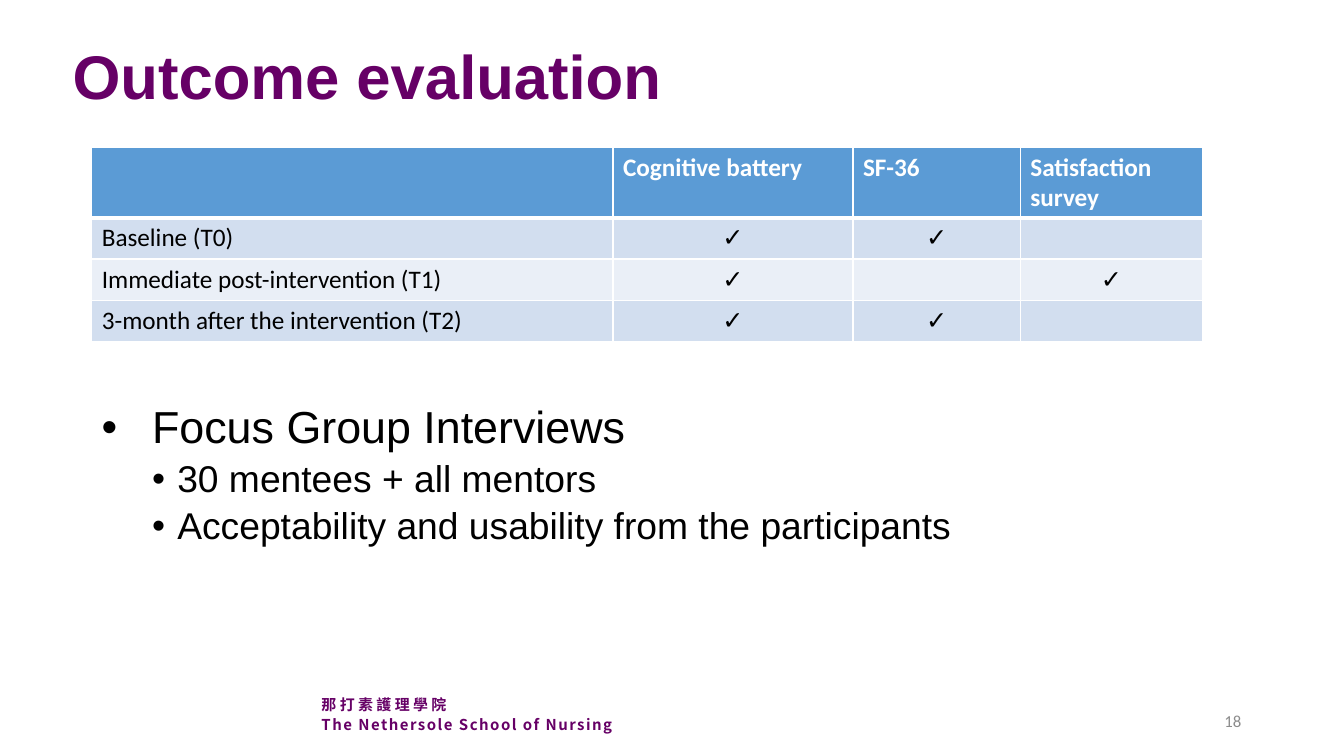
"""Build the outcome evaluation slide with its schedule table and interview notes."""
from dataclasses import dataclass

from lxml import etree
from pptx import Presentation
from pptx.dml.color import RGBColor
from pptx.enum.text import MSO_ANCHOR, MSO_AUTO_SIZE, PP_ALIGN
from pptx.oxml.ns import qn
from pptx.util import Inches, Pt

LEFT, CENTER, RIGHT = PP_ALIGN.LEFT, PP_ALIGN.CENTER, PP_ALIGN.RIGHT
TOP, MIDDLE = MSO_ANCHOR.TOP, MSO_ANCHOR.MIDDLE
NO_AUTOFIT = MSO_AUTO_SIZE.NONE
TITLE_ONLY = 5


@dataclass(frozen=True)
class Theme:
    """Colours, fonts and type sizes of the slide."""
    purple: str = "660066"
    black: str = "000000"
    white: str = "FFFFFF"
    grey: str = "8C8C8C"
    header: str = "5B9BD5"
    bands: tuple = ("D2DEEF", "EAEFF7")
    heading_font: str = "Arial"
    table_font: str = "Calibri"
    school_font: str = "Noto Sans CJK SC"
    title_size: float = 44
    bullet_size: float = 32
    detail_size: float = 26.6
    table_size: float = 18
    number_size: float = 12
    school_size: float = 10.67


class SlideBuilder:
    """Holds the theme and the current slide."""

    def __init__(self, presentation, theme):
        """Add a title-only slide to the presentation."""
        self.theme = theme
        self.slide = presentation.slides.add_slide(presentation.slide_layouts[TITLE_ONLY])

    def run(self, paragraph, text, font, size, color, bold=False, tracking=0):
        """Append one formatted run to a paragraph."""
        run = paragraph.add_run()
        run.text = text
        run.font.name = font
        run.font.size = Pt(size)
        run.font.bold = bold
        run.font.color.rgb = RGBColor.from_string(color)
        properties = run.font._element
        etree.SubElement(properties, qn("a:ea"), typeface=font)
        if tracking:
            properties.set("spc", str(round(tracking * 100)))

    def title(self, text, left, top, width, height):
        """Place and format the title placeholder."""
        shape = self.slide.shapes.title
        shape.left, shape.top = Inches(left), Inches(top)
        shape.width, shape.height = Inches(width), Inches(height)
        frame = shape.text_frame
        frame.auto_size = NO_AUTOFIT
        frame.vertical_anchor = MIDDLE
        paragraph = frame.paragraphs[0]
        paragraph.alignment = LEFT
        paragraph.line_spacing = 0.9
        self.run(paragraph, text, self.theme.heading_font, self.theme.title_size,
                 self.theme.purple, bold=True)

    def text_box(self, count, left, top, width, height, anchor=TOP):
        """Add a wrapping text box and return its paragraphs."""
        shape = self.slide.shapes.add_textbox(
            Inches(left), Inches(top), Inches(width), Inches(height))
        frame = shape.text_frame
        frame.word_wrap = True
        frame.vertical_anchor = anchor
        for _ in range(count - 1):
            frame.add_paragraph()
        return frame.paragraphs

    def bullets(self, items, left, top, width, height):
        """Add a bulleted list of (level, text) items."""
        styles = ((0.5, 0.5, self.theme.bullet_size), (0.75, 0.25, self.theme.detail_size))
        paragraphs = self.text_box(len(items), left, top, width, height)
        for index, (paragraph, (level, text)) in enumerate(zip(paragraphs, items)):
            margin, hanging, size = styles[level]
            paragraph.level = level
            paragraph.line_spacing = 0.9
            paragraph.space_before = Pt(5 if index else 0)
            properties = paragraph._p.get_or_add_pPr()
            properties.set("marL", str(Inches(margin)))
            properties.set("indent", str(-Inches(hanging)))
            etree.SubElement(properties, qn("a:buFont"), typeface=self.theme.heading_font)
            etree.SubElement(properties, qn("a:buChar"), char="•")
            self.run(paragraph, text, self.theme.heading_font, size, self.theme.black)

    def school_name(self, lines, left, top, width, height):
        """Add the school name, given as (text, tracking) lines."""
        paragraphs = self.text_box(len(lines), left, top, width, height)
        for paragraph, (text, tracking) in zip(paragraphs, lines):
            paragraph.line_spacing = Pt(14.7)
            self.run(paragraph, text, self.theme.school_font, self.theme.school_size,
                     self.theme.purple, bold=True, tracking=tracking)

    def slide_number(self, text, left, top, width, height):
        """Add the right-aligned slide number."""
        paragraph = self.text_box(1, left, top, width, height, MIDDLE)[0]
        paragraph.alignment = RIGHT
        self.run(paragraph, text, self.theme.table_font, self.theme.number_size,
                 self.theme.grey)

    def borders(self, cell, bottom_width):
        """Draw white borders around a table cell."""
        properties = cell._tc.get_or_add_tcPr()
        widths = (("a:lnL", 1), ("a:lnR", 1), ("a:lnT", 1), ("a:lnB", bottom_width))
        for position, (tag, width) in enumerate(widths):
            line = etree.Element(qn(tag), w=str(Pt(width)))
            fill = etree.SubElement(line, qn("a:solidFill"))
            etree.SubElement(fill, qn("a:srgbClr"), val=self.theme.white)
            properties.insert(position, line)

    def table(self, rows, column_widths, row_heights, left, top):
        """Add a banded table whose first row is the header."""
        table = self.slide.shapes.add_table(
            len(rows), len(column_widths), Inches(left), Inches(top),
            Inches(sum(column_widths)), Inches(sum(row_heights))).table
        for column, width in zip(table.columns, column_widths):
            column.width = Inches(width)
        for row, height in zip(table.rows, row_heights):
            row.height = Inches(height)
        for row_index, row in enumerate(rows):
            is_header = row_index == 0
            fill = self.theme.header if is_header else self.theme.bands[(row_index - 1) % 2]
            color = self.theme.white if is_header else self.theme.black
            for column_index, text in enumerate(row):
                cell = table.cell(row_index, column_index)
                cell.fill.solid()
                cell.fill.fore_color.rgb = RGBColor.from_string(fill)
                self.borders(cell, 3 if is_header else 1)
                if text:
                    paragraph = cell.text_frame.paragraphs[0]
                    paragraph.alignment = LEFT if is_header or column_index == 0 else CENTER
                    self.run(paragraph, text, self.theme.table_font,
                             self.theme.table_size, color, bold=is_header)


def main():
    """Build and save the presentation."""
    presentation = Presentation()
    presentation.slide_width, presentation.slide_height = Inches(13.33), Inches(7.5)
    builder = SlideBuilder(presentation, Theme())
    builder.school_name(
        [("那 打 素 護 理 學 院", 0), ("The Nethersole School of Nursing", 1.07)],
        3.09, 6.82, 3.92, 0.52)
    builder.slide_number("18", 9.41, 6.95, 3, 0.4)
    builder.title("Outcome evaluation", 0.62, 0.11, 11.98, 1.35)
    builder.table(
        [("", "Cognitive battery", "SF-36", "Satisfaction survey"),
         ("Baseline (T0)", "✓", "✓", ""),
         ("Immediate post-intervention (T1)", "✓", "", "✓"),
         ("3-month after the intervention (T2)", "✓", "✓", "")],
        (5.17, 2.38, 1.66, 1.81), (0.7, 0.41, 0.41, 0.41), 0.91, 1.46)
    builder.bullets(
        [(0, "Focus Group Interviews"),
         (1, "30 mentees + all mentors"),
         (1, "Acceptability and usability from the participants")],
        0.91, 3.97, 11.89, 1.75)
    presentation.save("out.pptx")


if __name__ == "__main__":
    main()
